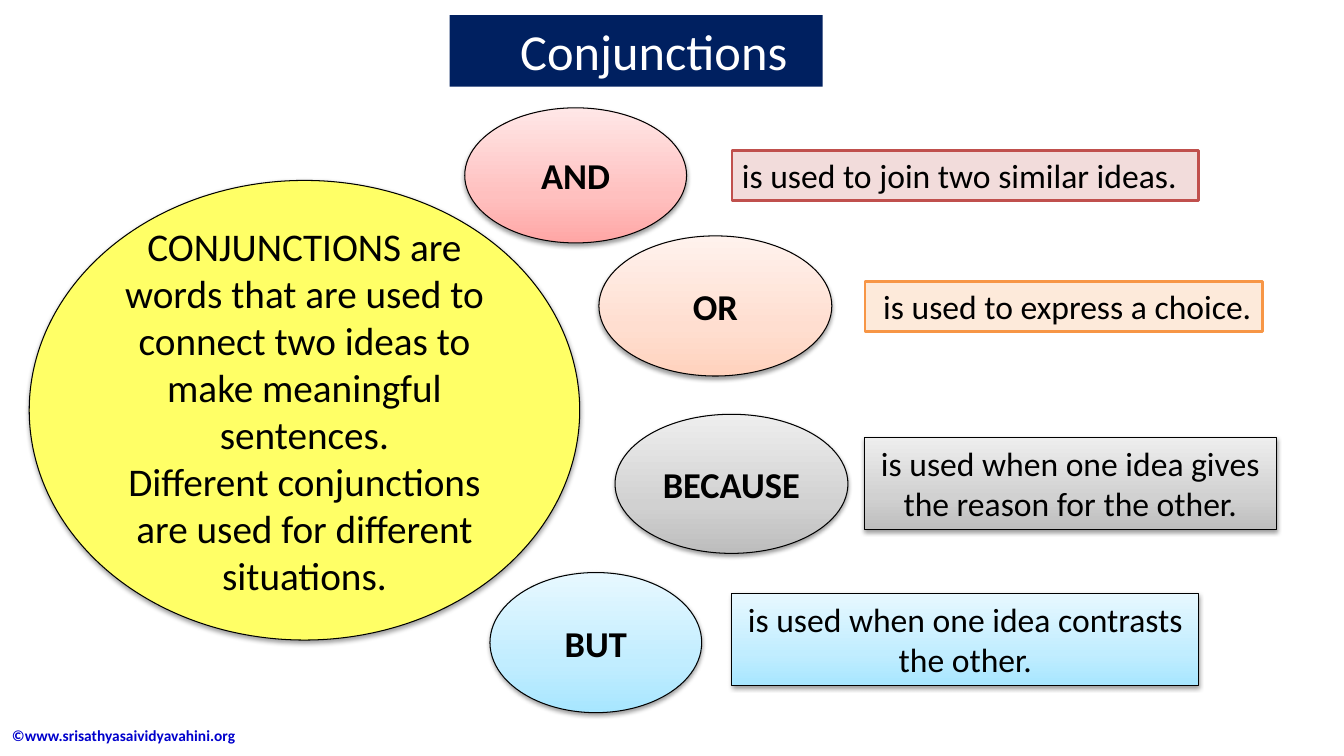
from copy import deepcopy

from lxml import etree
from pptx import Presentation
from pptx.dml.color import RGBColor
from pptx.enum.shapes import MSO_SHAPE as Shape
from pptx.enum.text import MSO_ANCHOR as Anchor, MSO_AUTO_SIZE as Fit, PP_ALIGN as Align
from pptx.oxml.ns import qn
from pptx.util import Inches, Pt

COLORS = {
    "ink": "000000", "white": "FFFFFF", "navy": "002060", "link": "0000CC",
    "yellow": "FFFF66", "pink": "F2DCDB", "red": "C0504D",
    "peach": "FDEADA", "orange": "F79646",
}
# Gradient colours from the bottom edge to the top edge
GRADS = {
    "rose": ("FFA6A5", "FFC0BF", "FFE7E7"),
    "apricot": ("FFD2BD", "FFDED0", "FFF2ED"),
    "gray": ("BDBDBD", "D1D1D1", "EEEEEE"),
    "sky": ("A7E6FF", "C1EDFF", "E7F8FF"),
}
STOPS = (0, 0.35, 1)

TITLE = "Conjunctions"
INTRO = [
    "CONJUNCTIONS are words that are used to connect two ideas to make meaningful sentences.",
    "Different conjunctions are used for different situations.",
]
FOOTER = "©www.srisathyasaividyavahini.org"

# word, oval box, oval fill
WORDS = [
    ("BUT", (4.86, 5.68, 2.1, 1.39), "sky"),
    ("AND", (4.61, 1.07, 2.2, 1.34), "rose"),
    ("OR", (5.94, 2.34, 2.31, 1.39), "apricot"),
    ("BECAUSE", (6.1, 4.11, 2.31, 1.38), "gray"),
]
# use, box, fill, border (None: thin black with shadow), left margin
USES = [
    ("is used to express a choice.", (8.58, 2.79, 3.94, 0.5), "peach", "orange", 0.18),
    ("is used when one idea gives the reason for the other.",
     (8.57, 4.34, 4.09, 0.91), "gray", None, 0.1),
    ("is used when one idea contrasts the other.",
     (7.26, 5.89, 4.63, 0.91), "sky", None, 0.1),
    ("is used to join two similar ideas.", (7.26, 1.49, 4.63, 0.5), "pink", "red", 0.1),
]


def rgb(name):
    return RGBColor.from_string(COLORS[name])


def paint(shape, name):
    """Fill with a plain colour or a three-stop upward gradient."""
    fill = shape.fill
    if name in COLORS:
        fill.solid()
        fill.fore_color.rgb = rgb(name)
        return
    fill.gradient()
    fill.gradient_angle = 90
    stops = shape._element.spPr.find(qn("a:gradFill")).find(qn("a:gsLst"))
    stops.append(deepcopy(stops[0]))
    for stop, pos, tone in zip(fill.gradient_stops, STOPS, GRADS[name]):
        stop.position = pos
        stop.color.rgb = RGBColor.from_string(tone)


def shade(shape):
    """Cast a soft shadow straight down."""
    effects = shape._element.spPr.find(qn("a:effectLst"))
    cast = etree.SubElement(effects, qn("a:outerShdw"), blurRad="40000",
                            dist="20000", dir="5400000", rotWithShape="0")
    tone = etree.SubElement(cast, qn("a:srgbClr"), val=COLORS["ink"])
    etree.SubElement(tone, qn("a:alpha"), val="38000")


def write(shape, lines, size, color="ink", bold=False, align=Align.CENTER,
          anchor=Anchor.MIDDLE, fit=Fit.NONE, left=0.1):
    frame = shape.text_frame
    frame.text = "\n".join(lines)
    layout = {"word_wrap": True, "auto_size": fit, "vertical_anchor": anchor,
              "margin_left": Inches(left)}
    for key, value in layout.items():
        setattr(frame, key, value)
    style = {"name": "Calibri", "size": Pt(size), "bold": bold}
    for para in frame.paragraphs:
        para.alignment = align
        for run in para.runs:
            for key, value in style.items():
                setattr(run.font, key, value)
            run.font.color.rgb = rgb(color)


def add(slide, kind, box, fill, border=None):
    shape = slide.shapes.add_shape(kind, *map(Inches, box))
    shape.shadow.inherit = False
    paint(shape, fill)
    shape.line.color.rgb = rgb(border or "ink")
    shape.line.width = Pt(2 if border else 0.75)
    if not border:
        shade(shape)
    return shape


def main():
    deck = Presentation()
    deck.slide_width, deck.slide_height = Inches(13.33), Inches(7.5)
    slide = deck.slides.add_slide(deck.slide_layouts[5])

    title = slide.shapes.title
    place = dict(zip(("left", "top", "width", "height"), (4.46, 0.15, 3.7, 0.71)))
    for key, value in place.items():
        setattr(title, key, Inches(value))
    paint(title, "navy")
    write(title, [TITLE], 36, "white", align=Align.LEFT, anchor=Anchor.TOP, left=0.7)

    intro = add(slide, Shape.OVAL, (0.29, 1.79, 5.46, 4.56), "yellow")
    write(intro, INTRO, 28)

    for word, box, fill in WORDS:
        write(add(slide, Shape.OVAL, box, fill), [word], 26, bold=True)

    for text, box, fill, border, left in USES:
        write(add(slide, Shape.RECTANGLE, box, fill, border), [text], 24,
              align=Align.LEFT if border else Align.CENTER,
              anchor=Anchor.TOP, fit=Fit.SHAPE_TO_FIT_TEXT, left=left)

    footer = slide.shapes.add_textbox(*map(Inches, (0.02, 7.1, 3.53, 0.4)))
    write(footer, [FOOTER], 11, "link", bold=True, align=Align.LEFT)

    deck.save("out.pptx")


if __name__ == "__main__":
    main()
